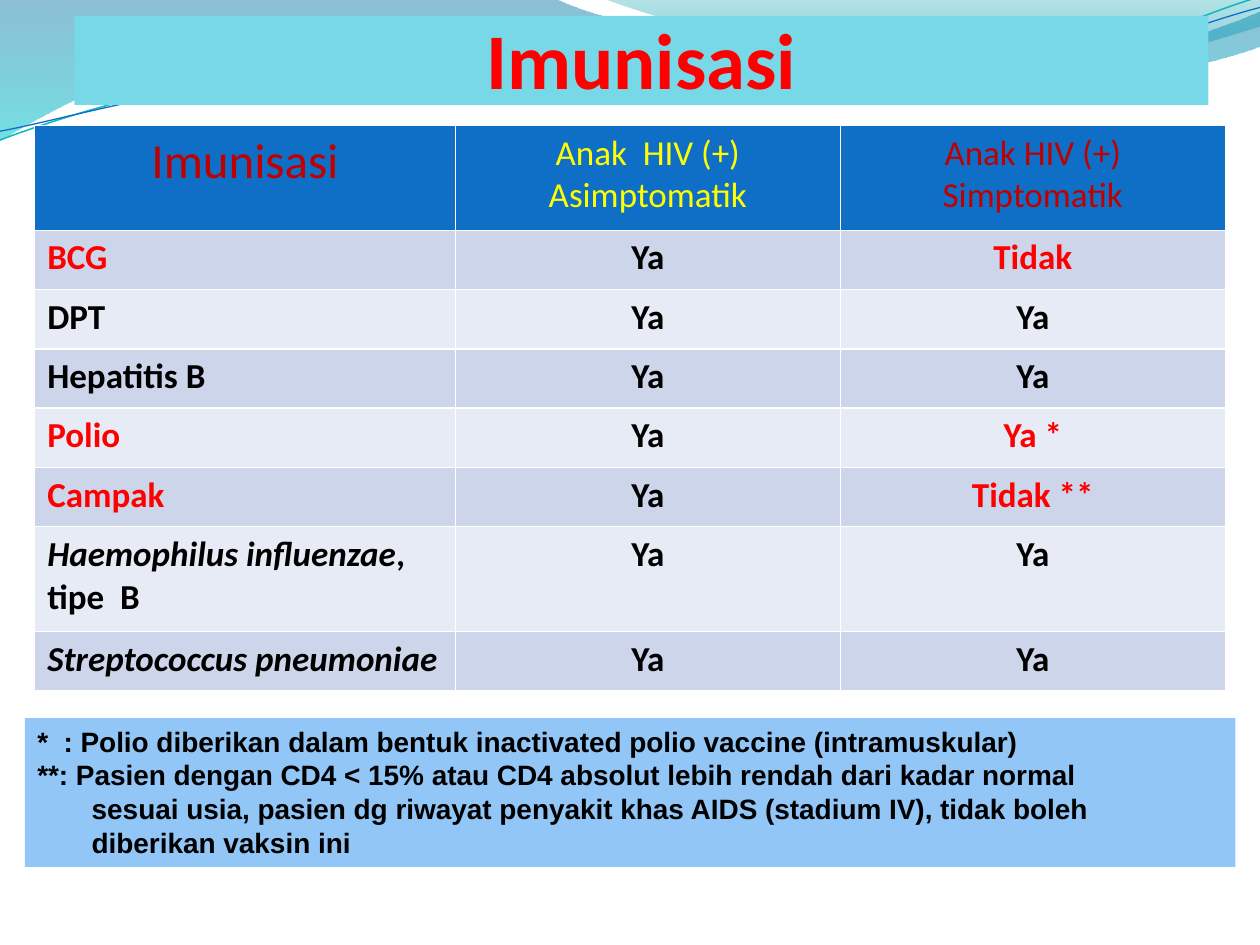
from lxml import etree
from pptx import Presentation
from pptx.dml.color import RGBColor
from pptx.enum.shapes import MSO_SHAPE
from pptx.enum.text import MSO_ANCHOR, MSO_AUTO_SIZE, PP_ALIGN
from pptx.oxml.ns import qn
from pptx.util import Pt

LEFT, CENTER = PP_ALIGN.LEFT, PP_ALIGN.CENTER
RECT, TOP, BOTTOM = MSO_SHAPE.RECTANGLE, MSO_ANCHOR.TOP, MSO_ANCHOR.BOTTOM
NO_FIT, GROW = MSO_AUTO_SIZE.NONE, MSO_AUTO_SIZE.SHAPE_TO_FIT_TEXT

RED = RGBColor(0xFF, 0x00, 0x00)
DARK_RED = RGBColor(0xC0, 0x00, 0x00)
YELLOW = RGBColor(0xFF, 0xFF, 0x00)
BLACK = RGBColor(0x00, 0x00, 0x00)
BLUE = RGBColor(0x0F, 0x6F, 0xC6)
TEAL = RGBColor(0x0A, 0xB8, 0xBF)
TITLE_FILL = RGBColor(0x77, 0xD9, 0xE8)
NOTE_FILL = RGBColor(0x91, 0xC6, 0xF7)
BANDS = RGBColor(0xCC, 0xD5, 0xEA), RGBColor(0xE7, 0xEB, 0xF5)

TITLE = "Imunisasi"
HEADER = [
    (["Imunisasi"], 28, DARK_RED),
    (["Anak  HIV (+) Asimptomatik"], 20, YELLOW),
    (["Anak HIV (+)", "Simptomatik"], 20, DARK_RED),
]
ROWS = [
    ("", "BCG", "Ya", "Tidak", RED),
    ("", "DPT", "Ya", "Ya", BLACK),
    ("", "Hepatitis B", "Ya", "Ya", BLACK),
    ("", "Polio", "Ya", "Ya *", RED),
    ("", "Campak", "Ya", "Tidak **", RED),
    ("Haemophilus influenzae", ", tipe  B", "Ya", "Ya", BLACK),
    ("Streptococcus pneumoniae", "", "Ya", "Ya", BLACK),
]
COL_WIDTHS = [240.4, 220, 220]
TALL, SHORT = 59.9, 33.9
ROW_HEIGHTS = [TALL] + [SHORT] * 5 + [TALL, SHORT]
NOTES = [
    ("*  : Polio diberikan dalam bentuk inactivated polio vaccine (intramuskular)", 0),
    ("**: Pasien dengan CD4 < 15% atau CD4 absolut lebih rendah dari kadar normal", 0),
    ("sesuai usia, pasien dg riwayat penyakit khas AIDS (stadium IV), tidak boleh", 31.1),
    ("diberikan vaksin ini", 31.1),
]
WAVES = [
    ([(0, 0), (317, -1), (343, 12, 478, 45, 546, 45), (614, 45, 690, 19, 720, 6.5),
      (721, 26), (708, 32, 626, 55, 537, 54), (448, 54, 275, 20, 185, 24.5),
      (93, 26, 33, 60, -1, 81)],
     [(0, RGBColor(0x00, 0x74, 0xA1), 45), (1, RGBColor(0x00, 0xC6, 0xCF), 55)]),
    ([(345, -1), (366, 8, 491, 44.6, 554, 47), (616, 49.7, 692, 23, 720, 15), (720, 0)],
     [(0, RGBColor(0x00, 0xA1, 0xA9), 30), (0.8, RGBColor(0x00, 0x8B, 0xBF), 45)]),
]
STROKES = [
    ([(0, 80), (34.6, 67, 113.8, 41, 199.4, 37.4), (284.4, 33.8, 427, 64, 513.4, 57.6),
      (599.8, 51, 675.4, 10.8, 718.6, -1.4)], TEAL, 0.85),
    ([(0, 75), (33.8, 69, 118, 44, 203.8, 40.3), (290, 36.7, 429.8, 60.5, 516.2, 54),
      (602, 48.2, 677.5, 15, 720, 4.3)], BLUE, 0.75),
]


def add_text(p, text, size=20, color=BLACK, bold=True, italic=False,
             font="Calibri", align=LEFT):
    p.alignment = align
    r = p.add_run()
    r.text = text
    r.font.size, r.font.name = Pt(size), font
    r.font.bold, r.font.italic = bold, italic
    r.font.color.rgb = color


def add_curve(shapes, path, close):
    ends = [(Pt(seg[-2]), Pt(seg[-1])) for seg in path]
    builder = shapes.build_freeform(*ends[0], scale=1.0)
    builder.add_line_segments(ends[1:], close=close)
    sp = builder.convert_to_shape()
    sp.shadow.inherit = False
    for node, seg in zip(list(sp._element.iter(qn("a:lnTo"))), path[1:]):
        if len(seg) == 6:
            for x, y in (seg[:2], seg[2:4]):
                etree.SubElement(node, qn("a:pt"), x=str(Pt(x) - sp.left),
                                 y=str(Pt(y) - sp.top))
            node.append(node[0])
            node.tag = qn("a:cubicBezTo")
    return sp


def add_waves(s):
    for path, stops in WAVES:
        sp = add_curve(s.shapes, path, True)
        sp.line.fill.background()
        sp.fill.gradient()
        sp.fill.gradient_angle = 270
        for stop, (position, color, _) in zip(sp.fill.gradient_stops, stops):
            stop.position, stop.color.rgb = position, color
        for clr, (_, _, alpha) in zip(sp._element.spPr.iter(qn("a:srgbClr")), stops):
            etree.SubElement(clr, qn("a:alpha"), val=str(alpha * 1000))
    group = s.shapes.add_group_shape()
    for path, color, width in STROKES:
        sp = add_curve(group.shapes, path, False)
        sp.fill.background()
        sp.line.color.rgb, sp.line.width = color, Pt(width)


def add_title(s):
    sp = s.shapes.title
    s.shapes._spTree.append(sp._element)
    sp.left, sp.top, sp.width, sp.height = Pt(42.5), Pt(9), Pt(648), Pt(51)
    sp.fill.solid()
    sp.fill.fore_color.rgb = TITLE_FILL
    tf = sp.text_frame
    tf.auto_size, tf.vertical_anchor = NO_FIT, BOTTOM
    tf.margin_left = tf.margin_right = tf.margin_bottom = 0
    add_text(tf.paragraphs[0], TITLE, size=45, color=RED, align=CENTER)


def add_schedule(s):
    table = s.shapes.add_table(len(ROW_HEIGHTS), len(COL_WIDTHS), Pt(19.8), Pt(71.7),
                               Pt(sum(COL_WIDTHS)), Pt(sum(ROW_HEIGHTS))).table
    for col, width in zip(table.columns, COL_WIDTHS):
        col.width = Pt(width)
    for i, (row, height) in enumerate(zip(table.rows, ROW_HEIGHTS)):
        row.height = Pt(height)
        for cell in row.cells:
            cell.fill.solid()
            cell.fill.fore_color.rgb = BANDS[(i - 1) % 2] if i else BLUE
    for j, (lines, size, color) in enumerate(HEADER):
        tf = table.cell(0, j).text_frame
        for k, line in enumerate(lines):
            p = tf.add_paragraph() if k else tf.paragraphs[0]
            add_text(p, line, size=size, color=color, bold=False, align=CENTER)
    for i, (species, name, without, with_symptoms, color) in enumerate(ROWS, 1):
        first, second, third = (c.text_frame.paragraphs[0] for c in table.rows[i].cells)
        if species:
            add_text(first, species, color=color, italic=True)
        if name:
            add_text(first, name, color=color)
        add_text(second, without, align=CENTER)
        add_text(third, with_symptoms, color=color, align=CENTER)


def add_notes(s):
    sp = s.shapes.add_shape(RECT, Pt(14.2), Pt(410.4), Pt(691.8), Pt(85))
    sp.shadow.inherit = False
    sp.fill.solid()
    sp.fill.fore_color.rgb = NOTE_FILL
    sp.line.fill.background()
    tf = sp.text_frame
    tf.word_wrap, tf.auto_size, tf.vertical_anchor = True, GROW, TOP
    for i, (text, indent) in enumerate(NOTES):
        p = tf.add_paragraph() if i else tf.paragraphs[0]
        add_text(p, text, size=16, font="Arial")
        p._p.get_or_add_pPr().set("marL", str(Pt(indent)))


def main():
    """Build the immunisation schedule slide."""
    prs = Presentation()
    prs.slide_width, prs.slide_height = Pt(720), Pt(540)
    s = prs.slides.add_slide(prs.slide_layouts[5])
    add_waves(s)
    add_title(s)
    add_schedule(s)
    add_notes(s)
    prs.save("out.pptx")


if __name__ == "__main__":
    main()
